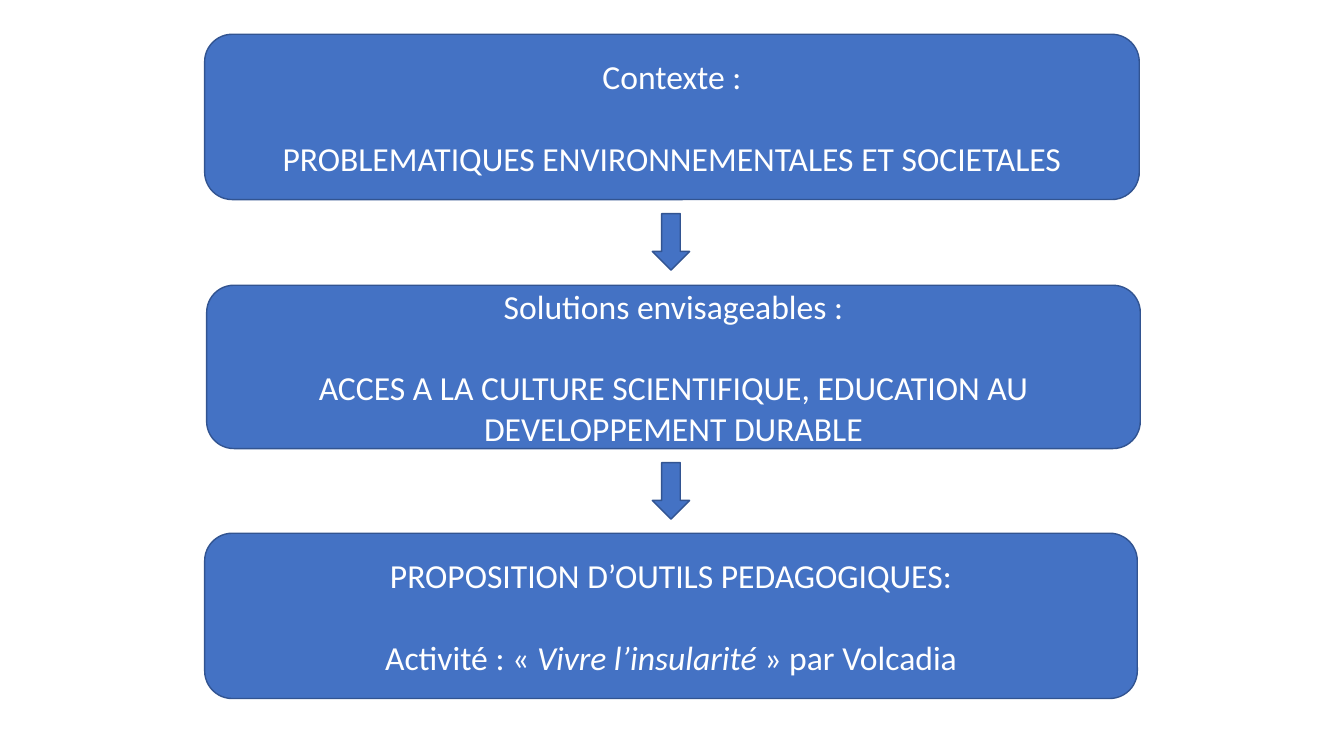
"""Build a slide with three stacked steps linked by down arrows."""
from dataclasses import dataclass

from pptx import Presentation
from pptx.dml.color import RGBColor as RGB
from pptx.enum.shapes import MSO_SHAPE as Preset
from pptx.enum.text import MSO_ANCHOR as Anchor, PP_ALIGN as Align
from pptx.util import Inches, Pt


@dataclass(frozen=True)
class Theme:
    """Colours and type sizes of the slide."""
    fill: RGB = RGB(0x44, 0x72, 0xC4)
    outline: RGB = RGB(0x32, 0x54, 0x91)
    text: RGB = RGB(0xFF, 0xFF, 0xFF)
    font: str = "Calibri"
    size: Pt = Pt(24)
    heading_gap: Pt = Pt(29.3)
    outline_width: Pt = Pt(1)


THEME = Theme()
PLAIN = {"name": THEME.font, "size": THEME.size, "italic": False}
ITALIC = {**PLAIN, "italic": True}

STEPS = [
    ((2.03, 0.34, 9.27, 1.64), "Contexte :",
     [("PROBLEMATIQUES ENVIRONNEMENTALES ET SOCIETALES", PLAIN)]),
    ((2.05, 2.83, 9.26, 1.62), "Solutions envisageables :",
     [("ACCES A LA CULTURE SCIENTIFIQUE, EDUCATION AU DEVELOPPEMENT DURABLE", PLAIN)]),
    ((2.03, 5.29, 9.25, 1.64), "PROPOSITION D’OUTILS PEDAGOGIQUES:",
     [("Activité : « ", PLAIN), ("Vivre l’insularité", ITALIC),
      (" » par Volcadia", PLAIN)]),
]
ARROW_TOPS = (2.12, 4.59)


def add_block(slide, preset, box):
    """Add a filled and outlined preset shape."""
    block = slide.shapes.add_shape(preset, *map(Inches, box))
    block.shadow.inherit = False
    block.fill.solid()
    block.fill.fore_color.rgb = THEME.fill
    block.line.color.rgb = THEME.outline
    block.line.width = THEME.outline_width
    return block


def write_line(paragraph, runs):
    """Write formatted runs into a centred paragraph."""
    paragraph.alignment = Align.CENTER
    for words, formats in runs:
        run = paragraph.add_run()
        run.text = words
        run.font.color.rgb = THEME.text
        for attribute, value in formats.items():
            setattr(run.font, attribute, value)


def add_step(slide, box, heading, detail):
    """Add a rounded box with a heading above its detail."""
    frame = add_block(slide, Preset.ROUNDED_RECTANGLE, box).text_frame
    frame.word_wrap = True
    frame.vertical_anchor = Anchor.MIDDLE
    write_line(frame.paragraphs[0], [(heading, PLAIN)])
    frame.paragraphs[0].space_after = THEME.heading_gap
    write_line(frame.add_paragraph(), detail)


def main():
    """Build and save the slide."""
    deck = Presentation()
    deck.slide_width, deck.slide_height = Inches(13.33), Inches(7.5)
    slide = deck.slides.add_slide(deck.slide_layouts[6])
    for box, heading, detail in STEPS:
        add_step(slide, box, heading, detail)
    for top in ARROW_TOPS:
        add_block(slide, Preset.DOWN_ARROW, (6.47, top, 0.37, 0.56))
    deck.save("out.pptx")


if __name__ == "__main__":
    main()
